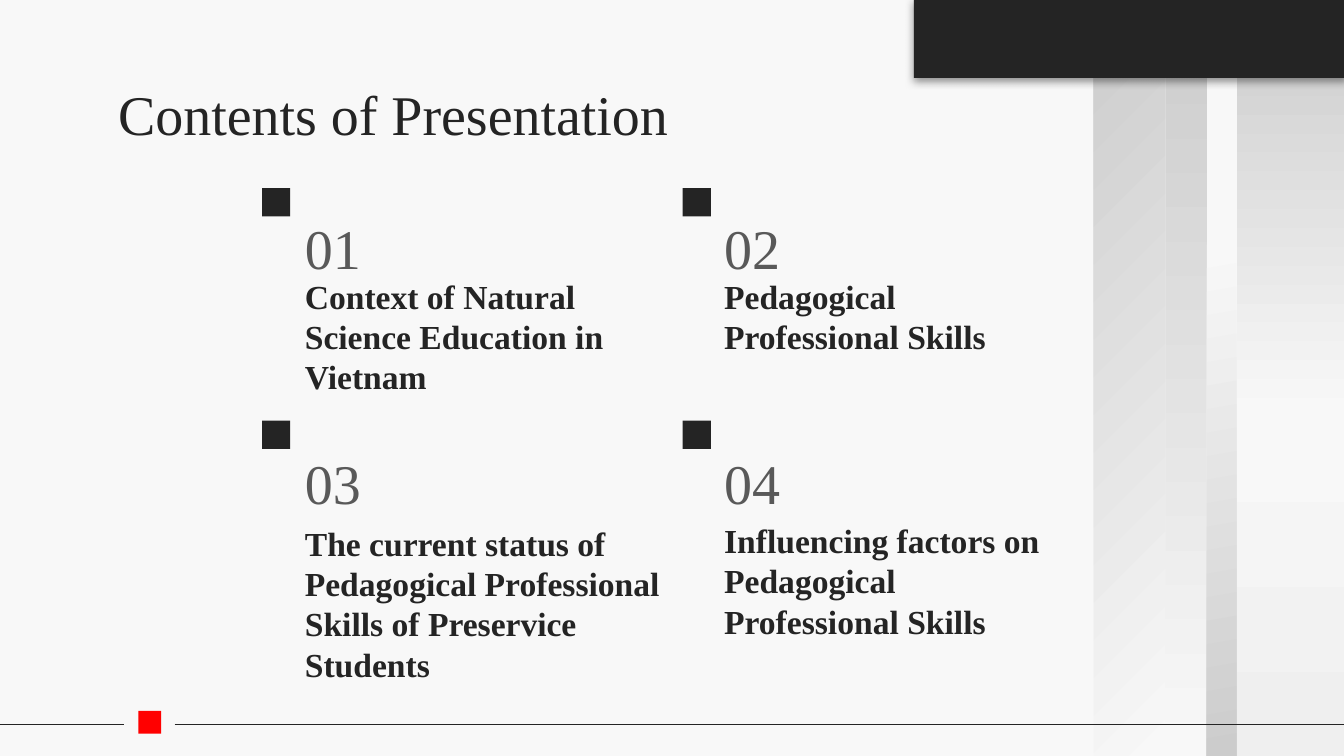
from pptx import Presentation
from pptx.dml.color import RGBColor
from pptx.enum.shapes import MSO_CONNECTOR, MSO_SHAPE
from pptx.enum.text import MSO_ANCHOR
from pptx.oxml import parse_xml
from pptx.oxml.ns import nsdecls
from pptx.util import Inches, Pt

DARK, GREY, RED = "242424", "595959", "FF0000"
PALE, SILVER = "F8F8F8", "CCCCCC"


def add_block(left, top, width, height, color):
    block = slide.shapes.add_shape(
        MSO_SHAPE.RECTANGLE, Inches(left), Inches(top), Inches(width), Inches(height))
    block.shadow.inherit = False
    block.line.fill.background()
    block.fill.solid()
    block.fill.fore_color.rgb = RGBColor.from_string(color)
    return block


def add_text(text, left, top, width, height, size, color, anchor, bold=False):
    box = slide.shapes.add_textbox(Inches(left), Inches(top), Inches(width), Inches(height))
    frame = box.text_frame
    frame.word_wrap = True
    frame.vertical_anchor = anchor
    frame.margin_left = frame.margin_right = Inches(0.1)
    frame.margin_top = frame.margin_bottom = Inches(0.1)
    para = frame.paragraphs[0]
    para.text = text
    para.font.name = "Times New Roman"
    para.font.size = Pt(size)
    para.font.bold = bold
    para.font.color.rgb = RGBColor.from_string(color)


deck = Presentation()
deck.slide_width = Inches(10)
deck.slide_height = deck.slide_width * 9 // 16
slide = deck.slides.add_slide(deck.slide_layouts[6])
slide.background.fill.solid()
slide.background.fill.fore_color.rgb = RGBColor.from_string(PALE)

# Gradient strips: left, width, rotation, flipped, angle, stops
strips = [
    (9.2, 0.8, 180, False, 90, [(0, "EFEFEF"), (45, PALE), (100, SILVER)]),
    (8.67, 0.31, 180, False, 90, [(0, PALE), (100, SILVER)]),
    (8.98, 0.22, 180, True, 280, [(0, PALE), (32, PALE), (100, SILVER)]),
    (8.14, 0.53, 0, False, 225, [(0, PALE), (100, SILVER)]),
]
for left, width, rotation, flipped, angle, stops in strips:
    strip = add_block(left, 0.01, width, 5.62, PALE)
    strip.rotation = rotation
    properties = strip._element.spPr
    if flipped:
        properties.xfrm.set("flipH", "1")
    stop_xml = "".join(
        f'<a:gs pos="{position * 1000}"><a:srgbClr val="{color}"/></a:gs>'
        for position, color in stops)
    gradient = parse_xml(
        f'<a:gradFill {nsdecls("a")} rotWithShape="1"><a:gsLst>{stop_xml}</a:gsLst>'
        f'<a:lin ang="{angle * 60000}" scaled="0"/></a:gradFill>')
    properties.replace(properties.find("{*}solidFill"), gradient)

# Dark corner banner with a soft shadow below it
banner = add_block(6.8, -0.01, 3.22, 0.59, DARK)
banner_properties = banner._element.spPr
banner_properties.xfrm.set("flipH", "1")
banner_properties.replace(banner_properties.find("{*}effectLst"), parse_xml(
    f'<a:effectLst {nsdecls("a")}>'
    f'<a:outerShdw blurRad="{Pt(4.5)}" dist="{Pt(1.5)}" dir="5400000" algn="bl" rotWithShape="0">'
    f'<a:srgbClr val="{DARK}"><a:alpha val="50000"/></a:srgbClr>'
    '</a:outerShdw></a:effectLst>'))

# Footer rule broken by a red marker
add_block(1.03, 5.29, 0.17, 0.17, RED)
for start, end in [(1.3, 10.01), (0, 0.92)]:
    rule = slide.shapes.add_connector(
        MSO_CONNECTOR.STRAIGHT, Inches(start), Inches(5.39), Inches(end), Inches(5.39))
    rule.line.color.rgb = RGBColor.from_string(DARK)
    rule.line.width = Pt(0.75)
    rule._element.spPr.append(parse_xml(f'<a:effectLst {nsdecls("a")}/>'))

# Contents in two columns: text, top and width of each topic
topics = [
    ("Context of Natural Science Education in Vietnam", 2.52, 2.83),
    ("Pedagogical Professional Skills", 2.22, 2.83),
    ("The current status of Pedagogical Professional Skills of Preservice Students", 4.66, 3.12),
    ("Influencing factors on Pedagogical Professional Skills", 4.34, 2.83),
]
for index, (topic, topic_top, topic_width) in enumerate(topics):
    row, column = divmod(index, 2)
    left = 2.17 + 3.12 * column
    add_block(1.95 + 3.13 * column, 1.4 + 1.73 * row, 0.21, 0.21, DARK)
    add_text(f"{index + 1:02}", left, 1.59 + 1.75 * row, 0.8, 0.49, 30, GREY,
             MSO_ANCHOR.MIDDLE)
    add_text(topic, left, topic_top, topic_width, 0.53, 18, DARK,
             MSO_ANCHOR.BOTTOM, bold=True)

add_text("Contents of Presentation", 0.78, 0.49, 8.18, 0.63, 30, DARK, MSO_ANCHOR.TOP)

deck.save("out.pptx")
